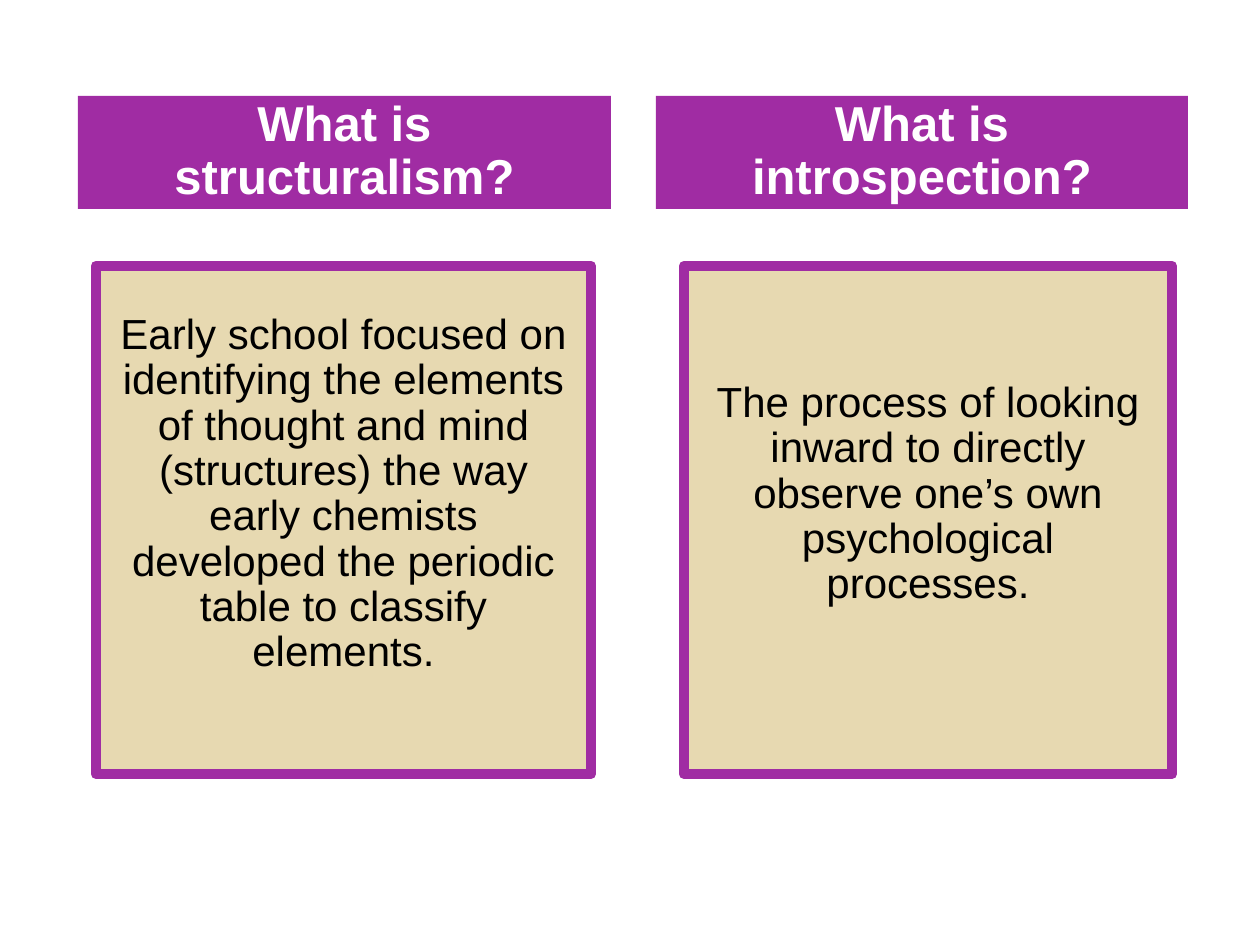
"""Builds a slide of two questions with their answers."""
from pptx import Presentation
from pptx.dml.color import RGBColor
from pptx.enum.shapes import MSO_SHAPE
from pptx.enum.text import MSO_ANCHOR, PP_ALIGN
from pptx.util import Pt

RECT = MSO_SHAPE.RECTANGLE
MIDDLE = MSO_ANCHOR.MIDDLE
CENTER = PP_ALIGN.CENTER
PX = 914400 // 126
INK = {"plum": "A02CA3", "sand": "E7D9B1", "white": "FFFFFF", "black": "000000"}
HEAD = {"top": 96, "high": 113, "fill": "plum", "ink": "white",
        "size": 28, "bold": True, "foot": 6}
BODY = {"top": 266, "high": 508, "fill": "sand", "ink": "black",
        "size": 24, "bold": False, "foot": 57, "edge": "plum"}
CARDS = [
    (HEAD, 78, 533, "What is structuralism?"),
    (BODY, 96, 495, "Early school focused on identifying the elements of thought "
                    "and mind (structures) the way early chemists developed the "
                    "periodic table to classify elements."),
    (HEAD, 656, 532, "What is introspection?"),
    (BODY, 684, 488, "The process of looking inward to directly observe one’s own "
                     "psychological processes."),
]


def tint(name):
    return RGBColor.from_string(INK[name])


def add_card(slide, style, left, wide, text):
    box = [n * PX for n in (left, style["top"], wide, style["high"])]
    card = slide.shapes.add_shape(RECT, *box)
    card.shadow.inherit = False
    card.fill.solid()
    card.fill.fore_color.rgb = tint(style["fill"])
    if "edge" in style:
        card.line.color.rgb = tint(style["edge"])
        card.line.width = Pt(6)
    else:
        card.line.fill.background()
    frame = card.text_frame
    frame.text = text
    frame.word_wrap = True
    frame.vertical_anchor = MIDDLE
    frame.margin_bottom = style["foot"] * PX
    para = frame.paragraphs[0]
    para.alignment = CENTER
    para.line_spacing = 0.9
    para.space_before = Pt(7.5)
    font = para.runs[0].font
    font.name = "Arial"
    font.size = Pt(style["size"])
    font.bold = style["bold"]
    font.color.rgb = tint(style["ink"])


def main():
    deck = Presentation()
    deck.slide_width = 1260 * PX
    deck.slide_height = 945 * PX
    slide = deck.slides.add_slide(deck.slide_layouts[6])
    for card in CARDS:
        add_card(slide, *card)
    deck.save("out.pptx")


if __name__ == "__main__":
    main()
